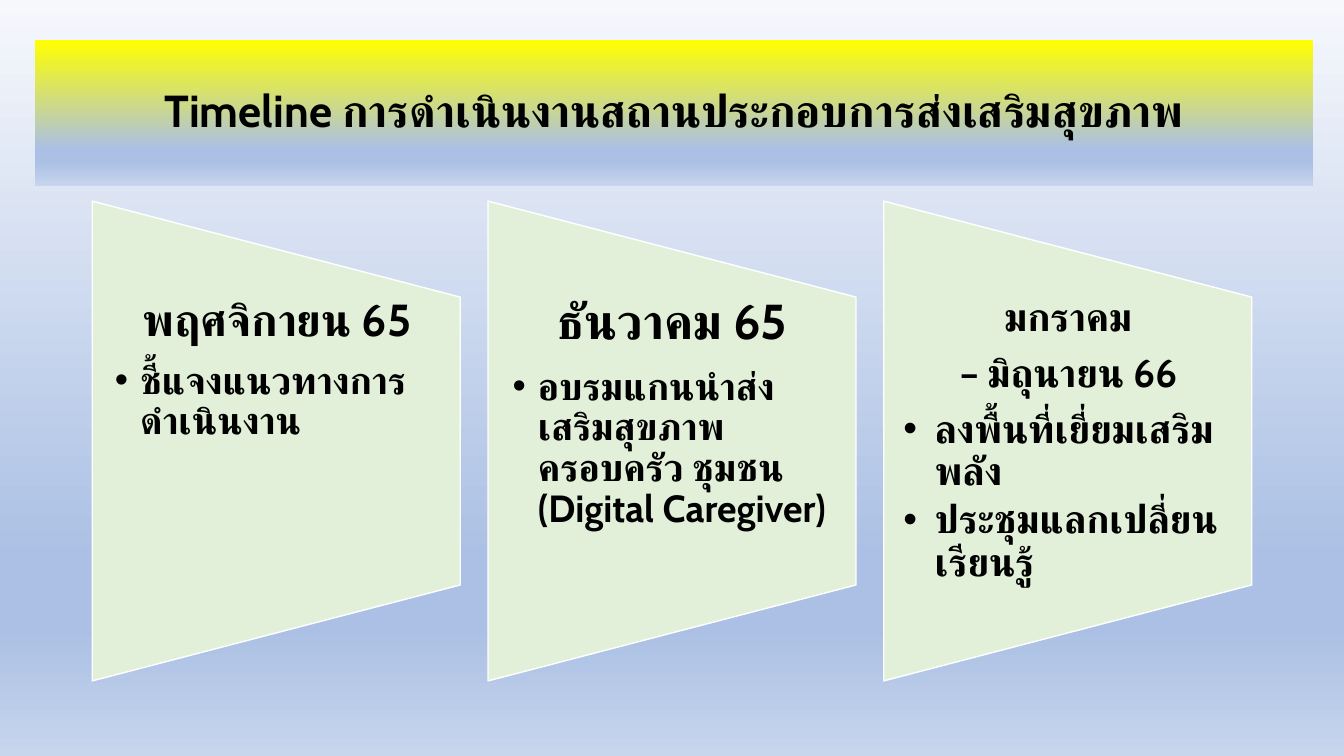
"""Build the health promotion timeline slide."""
from dataclasses import dataclass

from lxml.etree import SubElement
from pptx import Presentation
from pptx.dml.color import RGBColor
from pptx.dml.fill import FillFormat
from pptx.enum.shapes import MSO_SHAPE
from pptx.enum.text import MSO_ANCHOR, PP_ALIGN
from pptx.oxml.ns import qn
from pptx.oxml.xmlchemy import BaseOxmlElement
from pptx.slide import Slide
from pptx.text.text import TextFrame
from pptx.util import Inches, Pt

FONT = "Cabin"
BLACK = RGBColor(0x00, 0x00, 0x00)
WHITE = RGBColor(0xFF, 0xFF, 0xFF)
YELLOW = RGBColor(0xFF, 0xFF, 0x00)
PALE_BLUE = RGBColor(0xF6, 0xF8, 0xFC)
BLUE = RGBColor(0xAB, 0xC0, 0xE4)
LIGHT_BLUE = RGBColor(0xC7, 0xD5, 0xED)
PALE_GREEN = RGBColor(0xE2, 0xF0, 0xD9)

TITLE = "Timeline การดำเนินงานสถานประกอบการส่งเสริมสุขภาพ"
PANEL_STEP = 7.85 / 2


@dataclass(frozen=True)
class Stage:
    headings: tuple[str, ...]
    activities: tuple[str, ...]
    heading_size: int
    activity_size: int
    inset: float
    indent: float


STAGES = (
    Stage(("พฤศจิกายน 65",), ("ชี้แจงแนวทางการดำเนินงาน",), 32, 27, 0.22, 0.25),
    Stage(
        ("ธันวาคม 65",),
        ("อบรมแกนนำส่งเสริมสุขภาพครอบครัว ชุมชน (Digital Caregiver)",),
        35, 27, 0.24, 0.25,
    ),
    Stage(
        ("มกราคม", "– มิถุนายน 66"),
        ("ลงพื้นที่เยี่ยมเสริมพลัง", "ประชุมแลกเปลี่ยนเรียนรู้"),
        28, 28, 0.19, 0.31,
    ),
)


def apply_gradient(fill: FillFormat, owner: BaseOxmlElement, top: RGBColor) -> None:
    """Fill downwards from the top colour into the blues."""
    fill.gradient()
    fill.gradient_angle = 270
    stop_list = owner.find(".//" + qn("a:gsLst"))
    for stop in list(stop_list):
        stop_list.remove(stop)
    for percent, color in ((0, top), (74, BLUE), (83, BLUE), (100, LIGHT_BLUE)):
        stop = SubElement(stop_list, qn("a:gs"), pos=str(percent * 1000))
        SubElement(stop, qn("a:srgbClr"), val=str(color))


def write_paragraph(
    frame: TextFrame, text: str, size: int, after: float = 0, indent: float = 0
) -> None:
    """Write a centred line, or a bulleted one when an indent is given."""
    paragraph = frame.paragraphs[0]
    if paragraph.text:
        paragraph = frame.add_paragraph()
    paragraph.text = text
    paragraph.line_spacing = 0.9
    paragraph.space_after = Pt(round(size * after, 1))
    paragraph.alignment = PP_ALIGN.LEFT if indent else PP_ALIGN.CENTER
    paragraph.font.size = Pt(size)
    paragraph.font.bold = True
    for run in paragraph.runs:
        run.font.name = FONT
        run.font.size = Pt(size)
        run.font.bold = True
        run.font.color.rgb = BLACK
        SubElement(run.font._element, qn("a:cs"), typeface=FONT)
    if indent:
        properties = paragraph._p.get_or_add_pPr()
        properties.set("lvl", "1")
        properties.set("marL", str(Inches(indent)))
        properties.set("indent", str(-Inches(indent)))
        SubElement(properties, qn("a:buFont"), typeface="Arial")
        SubElement(properties, qn("a:buChar"), char="•")
        properties.append(properties.find(qn("a:defRPr")))


def add_title(slide: Slide) -> None:
    """Add the title banner."""
    banner = slide.shapes.add_shape(
        MSO_SHAPE.RECTANGLE, Inches(0.35), Inches(0.4), Inches(12.67), Inches(1.45)
    )
    banner.shadow.inherit = False
    banner.line.fill.background()
    apply_gradient(banner.fill, banner._element, YELLOW)
    banner.text_frame.word_wrap = True
    banner.text_frame.vertical_anchor = MSO_ANCHOR.MIDDLE
    write_paragraph(banner.text_frame, TITLE, 32)


def add_stage(slide: Slide, stage: Stage, offset: float) -> None:
    """Add one panel of the timeline with its text."""
    panel = slide.shapes.add_shape(
        MSO_SHAPE.FLOWCHART_MANUAL_OPERATION,
        Inches(0.36 + offset), Inches(2.55), Inches(4.76), Inches(3.65),
    )
    panel.rotation = 270
    panel.shadow.inherit = False
    panel.fill.solid()
    panel.fill.fore_color.rgb = PALE_GREEN
    panel.line.color.rgb = WHITE
    panel.line.width = Pt(1)

    text_box = slide.shapes.add_textbox(
        Inches(0.92 + offset), Inches(2.95), Inches(3.65), Inches(2.86)
    )
    frame = text_box.text_frame
    frame.word_wrap = True
    frame.margin_left = frame.margin_right = Inches(stage.inset)
    frame.margin_top = frame.margin_bottom = 0
    for heading in stage.headings:
        write_paragraph(frame, heading, stage.heading_size, 0.35)
    for activity in stage.activities:
        write_paragraph(frame, activity, stage.activity_size, 0.15, stage.indent)


def main() -> None:
    """Build and save the presentation."""
    presentation = Presentation()
    presentation.slide_width = Inches(13.33)
    presentation.slide_height = Inches(7.5)
    slide = presentation.slides.add_slide(presentation.slide_layouts[6])
    apply_gradient(slide.background.fill, slide._element, PALE_BLUE)
    add_title(slide)
    for index, stage in enumerate(STAGES):
        add_stage(slide, stage, index * PANEL_STEP)
    presentation.save("out.pptx")


if __name__ == "__main__":
    main()
